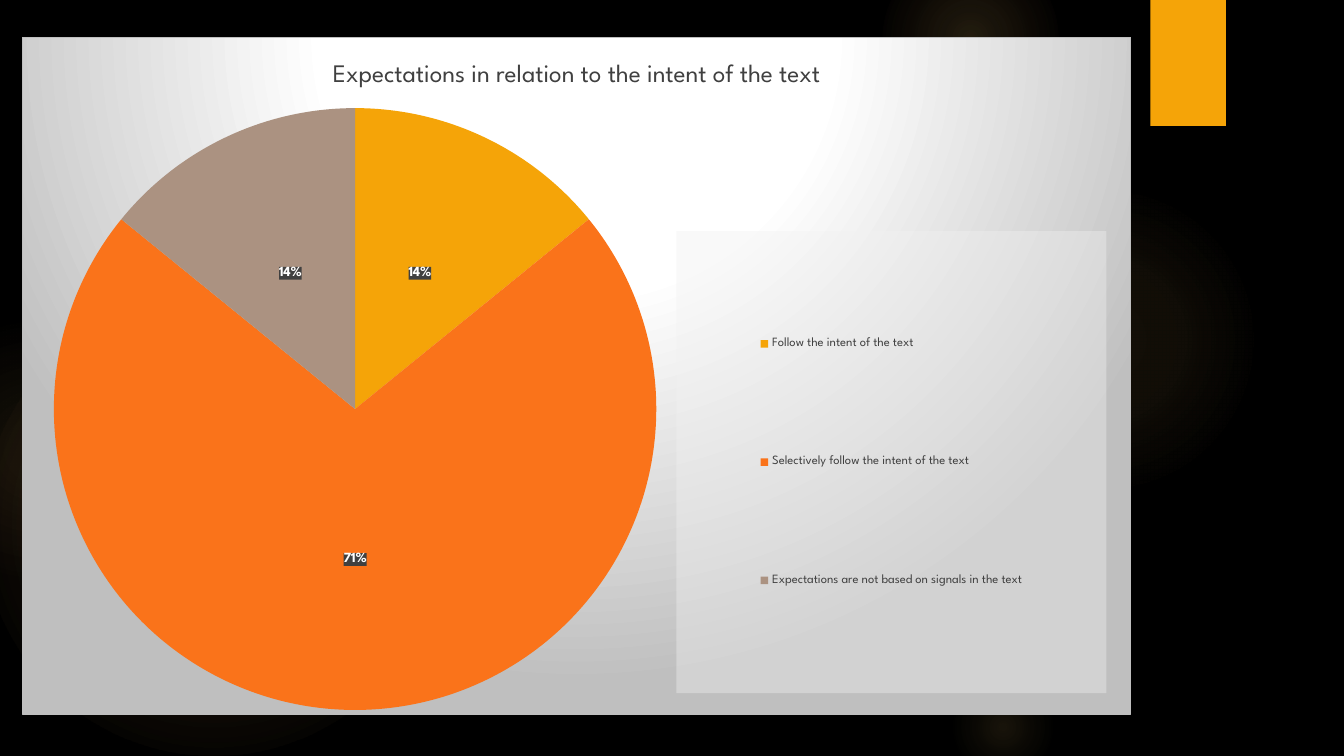
from lxml import etree
from pptx import Presentation
from pptx.chart.data import CategoryChartData
from pptx.dml.color import RGBColor
from pptx.enum.chart import XL_CHART_TYPE, XL_LABEL_POSITION as LABEL, XL_LEGEND_POSITION as LEGEND
from pptx.enum.shapes import MSO_SHAPE as SHAPE
from pptx.oxml import parse_xml
from pptx.oxml.ns import nsdecls, qn
from pptx.util import Inches, Pt

BLACK = RGBColor(0x00, 0x00, 0x00)
WHITE = RGBColor(0xFF, 0xFF, 0xFF)
SILVER = RGBColor(0xBF, 0xBF, 0xBF)
PALE = RGBColor(0xF2, 0xF2, 0xF2)
CHARCOAL = RGBColor(0x40, 0x40, 0x40)
GOLD = RGBColor(0xFA, 0xC9, 0x6A)
CORAL = RGBColor(0xF5, 0x9B, 0x74)
AMBER = RGBColor(0xF5, 0xA4, 0x08)
ORANGE = RGBColor(0xFA, 0x73, 0x1A)
TAUPE = RGBColor(0xAB, 0x92, 0x81)

TITLE = "Expectations in relation to the intent of the text"
ANSWERS = [
    ("Follow the intent of the text", 14, AMBER),
    ("Selectively follow the intent of the text", 71, ORANGE),
    ("Expectations are not based on signals in the text", 14, TAUPE),
]
# left, top, diameter, stops of (position %, colour, opacity %)
GLOWS = [
    (-0.17, 2.92, 4.58, [(0, GOLD, 11), (36, GOLD, 10), (75, GOLD, 0)]),
    (-0.92, 3.17, 2.58, [(0, GOLD, 8), (36, GOLD, 5), (71, CORAL, 0)]),
    (9.41, 1.83, 3.08, [(0, GOLD, 7), (36, GOLD, 6), (69, GOLD, 0)]),
    (8.75, -0.5, 1.75, [(0, GOLD, 14), (36, GOLD, 7), (73, GOLD, 0)]),
    (9.41, 6.67, 1.08, [(0, GOLD, 10), (31, GOLD, 5), (66, GOLD, 0)]),
]


def color_xml(color, opacity):
    return f'<a:srgbClr val="{color}"><a:alpha val="{opacity * 1000}"/></a:srgbClr>'


def solid_xml(color, opacity=100):
    return f'<a:solidFill {nsdecls("a")}>{color_xml(color, opacity)}</a:solidFill>'


def radial_xml(stops, top=50, bottom=50):
    """Circular gradient whose centre is set by the top and bottom percentages."""
    gs = "".join(f'<a:gs pos="{pos * 1000}">{color_xml(color, opacity)}</a:gs>'
                 for pos, color, opacity in stops)
    return (f'<a:gradFill {nsdecls("a")} rotWithShape="1"><a:gsLst>{gs}</a:gsLst>'
            f'<a:path path="circle"><a:fillToRect l="50000" t="{top * 1000}" '
            f'r="50000" b="{bottom * 1000}"/></a:path></a:gradFill>')


def chart_format(fill, line="<a:ln><a:noFill/></a:ln>"):
    return parse_xml(f'<c:spPr {nsdecls("c", "a")}>{fill}{line}</c:spPr>')


def chart_layout(x, y, w, h, inner=False):
    """Manual layout in fractions of the chart area."""
    target = '<c:layoutTarget val="inner"/>' if inner else ""
    return parse_xml(
        f'<c:layout {nsdecls("c")}><c:manualLayout>{target}<c:xMode val="edge"/>'
        f'<c:yMode val="edge"/><c:x val="{x}"/><c:y val="{y}"/><c:w val="{w}"/>'
        f'<c:h val="{h}"/></c:manualLayout></c:layout>')


def drop_layout(element):
    for layout in element.findall(qn("c:layout")):
        element.remove(layout)


class SlideBuilder:
    font = "League Spartan"

    def __init__(self, prs):
        self.s = prs.slides.add_slide(prs.slide_layouts[6])
        fill = self.s.background.fill
        fill.solid()
        fill.fore_color.rgb = BLACK

    def shape(self, kind, left, top, width, height):
        sp = self.s.shapes.add_shape(kind, *map(Inches, (left, top, width, height)))
        sp.shadow.inherit = False
        sp.line.fill.background()
        return sp

    def glow(self, left, top, size, stops):
        sp = self.shape(SHAPE.OVAL, left, top, size, size)
        geometry = sp._element.spPr.find(qn("a:prstGeom"))
        geometry.addnext(etree.fromstring(radial_xml(stops)))

    def bar(self, left, top, width, height, color):
        sp = self.shape(SHAPE.RECTANGLE, left, top, width, height)
        sp.fill.solid()
        sp.fill.fore_color.rgb = color

    def style(self, font, size, color, bold=False):
        font.name, font.size, font.bold = self.font, Pt(size), bold
        font.color.rgb = color

    def pie(self, left, top, width, height, title, answers):
        data = CategoryChartData()
        data.categories = [name for name, _, _ in answers]
        data.add_series("Series 1", [value for _, value, _ in answers])
        frame = self.s.shapes.add_chart(
            XL_CHART_TYPE.PIE, *map(Inches, (left, top, width, height)), data)
        chart = frame.chart
        self.style(chart.font, 10, CHARCOAL)
        backdrop = radial_xml([(0, WHITE, 100), (39, WHITE, 100), (100, SILVER, 100)], -80, 180)
        border = f'<a:ln w="{Pt(0.75)}">{solid_xml(SILVER)}</a:ln>'
        space = chart._chartSpace
        space.find(qn("c:txPr")).addprevious(chart_format(backdrop, border))

        chart.has_title = True
        p = chart.chart_title.text_frame.paragraphs[0]
        p.text = title
        self.style(p.font, 18, CHARCOAL)
        chart.chart_title.include_in_layout = False

        plot = chart.plots[0]
        plot.vary_by_categories = True
        area = space.chart.plotArea
        drop_layout(area)
        area.insert(0, chart_layout(0.028, 0.104, 0.544, 0.89, inner=True))
        series = plot.series[0]
        for i, (_, _, color) in enumerate(answers):
            fill = series.points[i].format.fill
            fill.solid()
            fill.fore_color.rgb = color
        self.pie_labels(series.data_labels)
        self.legend(chart)

    def pie_labels(self, labels):
        labels.show_value = True
        labels.number_format = '0"%"'
        labels.number_format_is_linked = False
        labels.position = LABEL.CENTER
        self.style(labels.font, 10, WHITE, bold=True)
        txt = labels._element.find(qn("c:txPr"))
        txt.addprevious(chart_format(solid_xml(CHARCOAL, 90)))

    def legend(self, chart):
        chart.has_legend = True
        legend = chart.legend
        legend.position = LEGEND.RIGHT
        legend.include_in_layout = False
        self.style(legend.font, 9, CHARCOAL)
        element = legend._element
        drop_layout(element)
        element.find(qn("c:legendPos")).addnext(chart_layout(0.59, 0.286, 0.388, 0.683))
        element.find(qn("c:txPr")).addprevious(chart_format(solid_xml(PALE, 39)))


def main():
    prs = Presentation()
    prs.slide_width, prs.slide_height = Inches(13.33), Inches(7.5)
    slide = SlideBuilder(prs)
    for glow in GLOWS:
        slide.glow(*glow)
    slide.bar(11.41, 0, 0.75, 1.25, AMBER)
    slide.pie(0.22, 0.37, 11, 6.72, TITLE, ANSWERS)
    prs.save("out.pptx")


if __name__ == "__main__":
    main()
